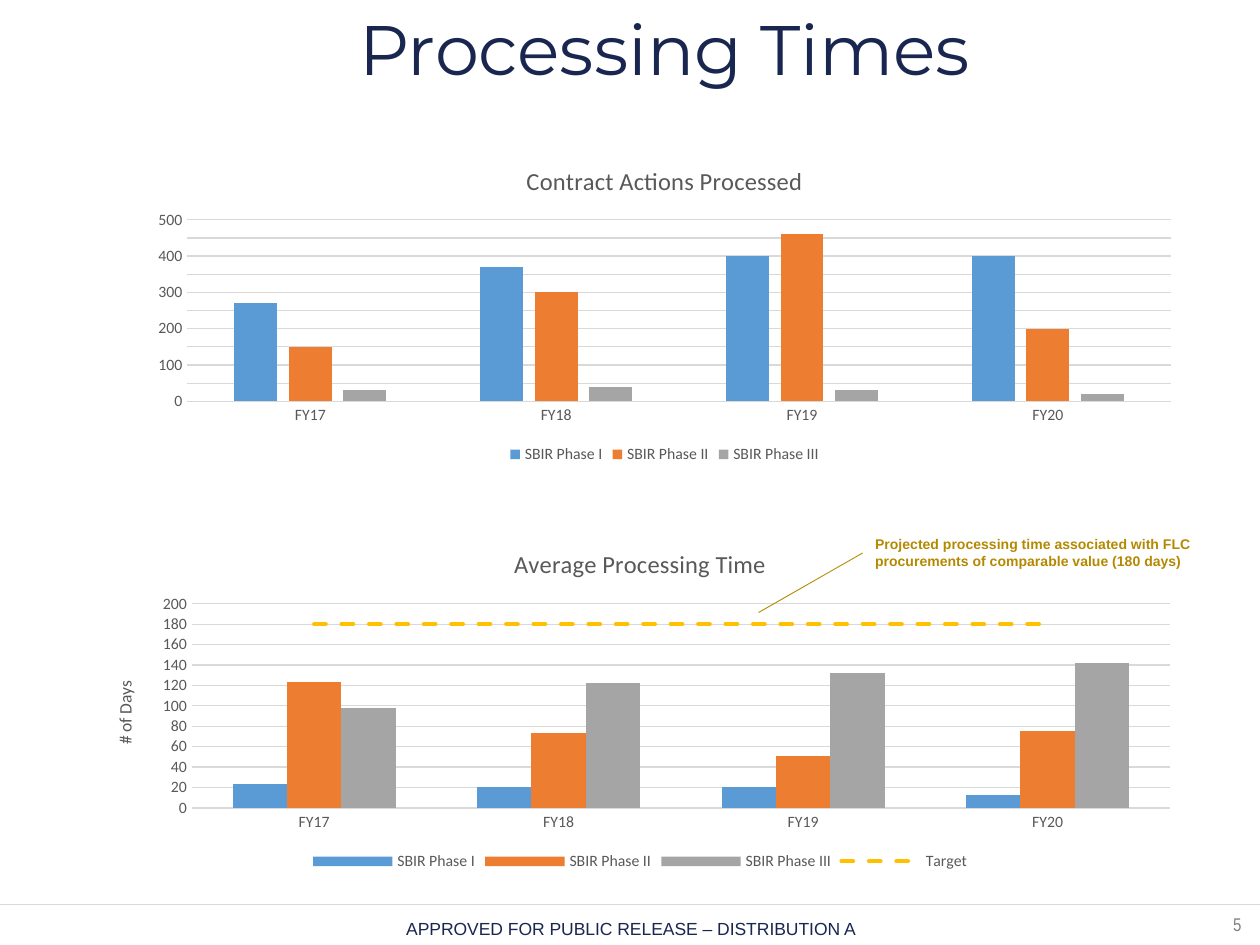
"""Build the Processing Times slide with two fiscal-year charts."""
from dataclasses import dataclass
from typing import Optional

from lxml.etree import SubElement
from pptx import Presentation
from pptx.chart.data import CategoryChartData
from pptx.dml.color import RGBColor
from pptx.enum.chart import XL_CHART_TYPE as ChartType
from pptx.enum.chart import XL_LEGEND_POSITION as LegendPosition
from pptx.enum.chart import XL_TICK_MARK as TickMark
from pptx.enum.dml import MSO_LINE as Dash
from pptx.enum.shapes import MSO_CONNECTOR as Connector
from pptx.enum.text import MSO_ANCHOR as Anchor
from pptx.enum.text import MSO_AUTO_SIZE as AutoSize
from pptx.enum.text import PP_ALIGN as Align
from pptx.oxml.ns import qn
from pptx.util import Pt

COLORS = {
    "navy": "19264F", "rule": "D9D9D9", "page": "808080", "label": "595959",
    "callout": "B48900", "SBIR Phase I": "5B9BD5", "SBIR Phase II": "ED7D31",
    "SBIR Phase III": "A5A5A5", "Target": "FFC000",
}
YEARS = ("FY17", "FY18", "FY19", "FY20")


@dataclass(frozen=True)
class Box:
    left: float
    top: float
    width: float
    height: float

    def lengths(self) -> tuple:
        return Pt(self.left), Pt(self.top), Pt(self.width), Pt(self.height)


@dataclass(frozen=True)
class Label:
    text: str
    box: Box
    size: float
    font: str
    color: str
    align: Align = Align.CENTER
    bold: bool = False
    wrap: bool = True


@dataclass(frozen=True)
class Rule:
    start: tuple
    end: tuple
    color: str


@dataclass(frozen=True)
class YearChart:
    title: str
    box: Box
    values: dict
    gap: int
    overlap: int
    maximum: int
    step: int
    axis_title: Optional[str] = None
    line_series: Optional[str] = None


LABELS = (
    Label("5", Box(694, 518.4, 26, 21), 10.5, "Arial Narrow", "page", wrap=False),
    Label("APPROVED FOR PUBLIC RELEASE – DISTRIBUTION A",
          Box(150.5, 521.3, 420, 19.4), 10, "Arial", "navy"),
    Label("Projected processing time associated with FLC "
          "procurements of comparable value (180 days)",
          Box(493, 302.4, 227, 26.6), 8, "Arial", "callout", Align.LEFT, True),
)
RULES = (
    Rule((0, 517), (720, 517), "rule"),
    Rule((493, 316), (433.5, 350), "callout"),
)
CHARTS = (
    YearChart("Contract Actions Processed", Box(78.5, 83.5, 602.6, 184.3),
              {"SBIR Phase I": (270, 370, 400, 400),
               "SBIR Phase II": (150, 300, 460, 200),
               "SBIR Phase III": (30, 40, 30, 20)},
              gap=219, overlap=-27, maximum=500, step=50),
    YearChart("Average Processing Time", Box(50.4, 302.4, 630.7, 198),
              {"SBIR Phase I": (23, 20, 20, 13),
               "SBIR Phase II": (123, 73, 51, 75),
               "SBIR Phase III": (98, 122, 132, 142),
               "Target": (180, 180, 180, 180)},
              gap=150, overlap=0, maximum=200, step=20,
              axis_title="# of Days", line_series="Target"),
)


def rgb(name: str) -> RGBColor:
    return RGBColor.from_string(COLORS[name])


def style_font(font, size: float, face: str, color: str, bold: bool = False) -> None:
    font.size, font.name, font.bold = Pt(size), face, bold
    font.color.rgb = rgb(color)


def style_line(line, color: str, width: float) -> None:
    line.color.rgb = rgb(color)
    line.width = Pt(width)


def write_chart_title(frame, text: str, size: float) -> None:
    run = frame.paragraphs[0].add_run()
    run.text = text
    style_font(run.font, size, "Calibri", "label")


def draw_title(slide, text: str) -> None:
    title = slide.shapes.title
    title.left, title.top, title.width, title.height = Box(63.4, 5, 633, 51).lengths()
    frame = title.text_frame
    frame.auto_size = AutoSize.NONE
    frame.vertical_anchor = Anchor.MIDDLE
    paragraph = frame.paragraphs[0]
    paragraph.alignment, paragraph.line_spacing = Align.CENTER, 0.9
    run = paragraph.add_run()
    run.text = text
    style_font(run.font, 40, "Montserrat", "navy")


def draw_label(slide, label: Label) -> None:
    frame = slide.shapes.add_textbox(*label.box.lengths()).text_frame
    frame.word_wrap = label.wrap
    frame.auto_size = AutoSize.SHAPE_TO_FIT_TEXT
    paragraph = frame.paragraphs[0]
    paragraph.alignment = label.align
    run = paragraph.add_run()
    run.text = label.text
    style_font(run.font, label.size, label.font, label.color, label.bold)


def draw_rule(slide, rule: Rule) -> None:
    ends = [Pt(length) for length in (*rule.start, *rule.end)]
    connector = slide.shapes.add_connector(Connector.STRAIGHT, *ends)
    style_line(connector.line, rule.color, 0.5)
    SubElement(connector._element.spPr, qn("a:effectLst"))


def turn_into_line(plot, series) -> None:
    """Move a column series to a dashed line plot on the same axes."""
    style_line(series.format.line, series.name, 2.25)
    series.format.line.dash_style = Dash.DASH
    bars, element = plot._element, series._element
    shape_style = element.find(qn("c:spPr"))
    shape_style.find(qn("a:ln")).set("cap", "rnd")
    for inversion in element.findall(qn("c:invertIfNegative")):
        element.remove(inversion)
    line_plot = bars.makeelement(qn("c:lineChart"))
    bars.addnext(line_plot)
    SubElement(line_plot, qn("c:grouping")).set("val", "standard")
    SubElement(line_plot, qn("c:varyColors")).set("val", "0")
    line_plot.append(element)
    marker = element.makeelement(qn("c:marker"))
    SubElement(marker, qn("c:symbol")).set("val", "none")
    shape_style.addnext(marker)
    SubElement(element, qn("c:smooth")).set("val", "0")
    SubElement(line_plot, qn("c:marker")).set("val", "1")
    for axis in bars.findall(qn("c:axId")):
        SubElement(line_plot, qn("c:axId")).set("val", axis.get("val"))


def draw_chart(slide, spec: YearChart) -> None:
    data = CategoryChartData()
    data.categories = YEARS
    for name, values in spec.values.items():
        data.add_series(name, values)
    chart = slide.shapes.add_chart(
        ChartType.COLUMN_CLUSTERED, *spec.box.lengths(), data).chart
    style_font(chart.font, 10, "Calibri", "label")
    write_chart_title(chart.chart_title.text_frame, spec.title, 14)
    chart.chart_title.include_in_layout = False
    chart.has_legend = True
    chart.legend.position = LegendPosition.BOTTOM
    chart.legend.include_in_layout = False
    style_font(chart.legend.font, 9, "Calibri", "label")

    years, amounts = chart.category_axis, chart.value_axis
    for axis in (years, amounts):
        axis.major_tick_mark = axis.minor_tick_mark = TickMark.NONE
        style_font(axis.tick_labels.font, 9, "Calibri", "label")
    style_line(years.format.line, "rule", 0.75)
    amounts.format.line.fill.background()
    style_line(amounts.major_gridlines.format.line, "rule", 0.75)
    amounts.minimum_scale, amounts.maximum_scale = 0, spec.maximum
    amounts.major_unit = spec.step
    if spec.axis_title:
        write_chart_title(amounts.axis_title.text_frame, spec.axis_title, 10)

    plot = chart.plots[0]
    plot.gap_width, plot.overlap = spec.gap, spec.overlap
    plot.vary_by_categories = False
    for series in list(plot.series):
        if series.name == spec.line_series:
            turn_into_line(plot, series)
        else:
            series.format.fill.solid()
            series.format.fill.fore_color.rgb = rgb(series.name)


def main() -> None:
    deck = Presentation()
    deck.slide_width, deck.slide_height = Pt(720), Pt(540)
    slide = deck.slides.add_slide(deck.slide_layouts[5])
    draw_title(slide, "Processing Times")
    for spec in CHARTS:
        draw_chart(slide, spec)
    for label in LABELS:
        draw_label(slide, label)
    for rule in RULES:
        draw_rule(slide, rule)
    deck.save("out.pptx")


if __name__ == "__main__":
    main()
